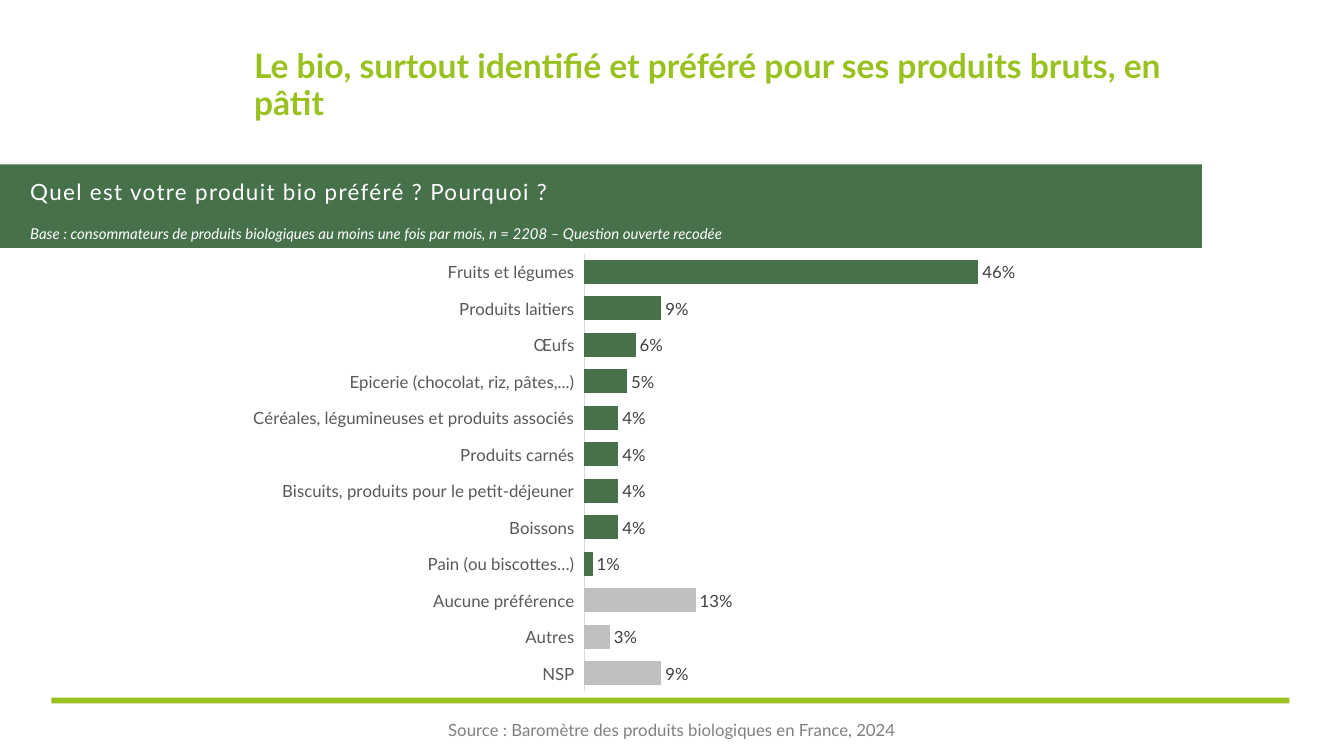
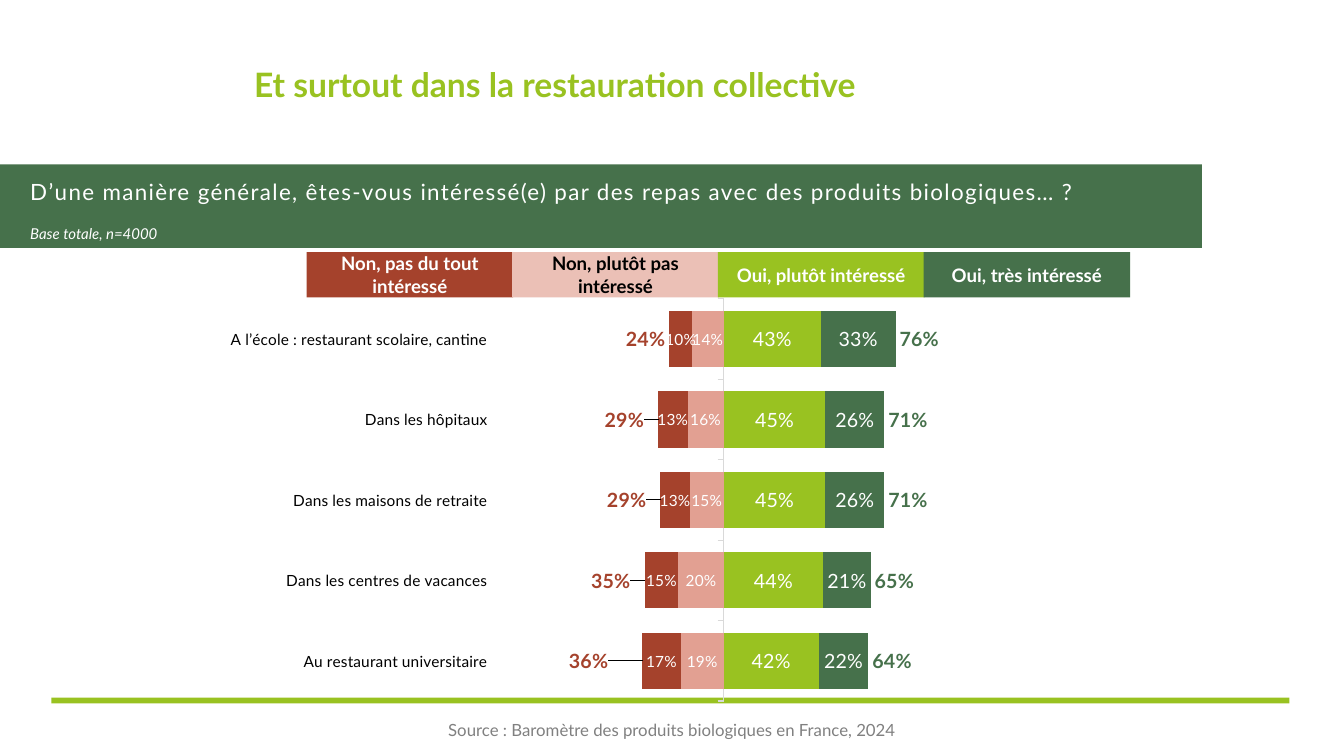
from lxml import etree
from pptx import Presentation
from pptx.chart.data import CategoryChartData
from pptx.dml.color import RGBColor
from pptx.enum.chart import XL_CHART_TYPE, XL_LABEL_POSITION, XL_TICK_LABEL_POSITION, XL_TICK_MARK
from pptx.enum.shapes import MSO_SHAPE
from pptx.enum.text import MSO_ANCHOR, PP_ALIGN
from pptx.oxml import parse_xml
from pptx.oxml.ns import nsdecls, qn
from pptx.util import Inches, Pt

RECT = MSO_SHAPE.RECTANGLE
MIDDLE = MSO_ANCHOR.MIDDLE
LEFT, CENTER = PP_ALIGN.LEFT, PP_ALIGN.CENTER
BARS, STACK = XL_CHART_TYPE.BAR_CLUSTERED, XL_CHART_TYPE.BAR_STACKED
END, BASE, MID = XL_LABEL_POSITION.OUTSIDE_END, XL_LABEL_POSITION.INSIDE_BASE, XL_LABEL_POSITION.CENTER
LOW = XL_TICK_LABEL_POSITION.LOW
NONE, OUT = XL_TICK_MARK.NONE, XL_TICK_MARK.OUTSIDE

GREEN = RGBColor(0x46, 0x71, 0x4B)
LIME = RGBColor(0x99, 0xC2, 0x21)
RUST = RGBColor(0xA5, 0x42, 0x2C)
ROSE = RGBColor(0xE2, 0xA0, 0x92)
PINK = RGBColor(0xEB, 0xC0, 0xB6)
WHITE = RGBColor(0xFF, 0xFF, 0xFF)
BLACK = RGBColor(0, 0, 0)
GRAY = RGBColor(0x80, 0x80, 0x80)
SILVER = RGBColor(0xBF, 0xBF, 0xBF)
PALE = RGBColor(0xD9, 0xD9, 0xD9)
DARK = RGBColor(0x40, 0x40, 0x40)
SLATE = RGBColor(0x59, 0x59, 0x59)
FONT = "Lato"


def add_box(slide, box, text="", size=12, color=WHITE, fill=None, bold=False,
            italic=False, align=LEFT, inset=0, track=0, lead=None):
    box = [Inches(n) for n in box]
    if fill is None:
        shape = slide.shapes.add_textbox(*box)
    else:
        shape = slide.shapes.add_shape(RECT, *box)
        shape.shadow.inherit = False
        shape.fill.solid()
        shape.fill.fore_color.rgb = fill
        shape.line.fill.background()
    if not text:
        return
    frame = shape.text_frame
    frame.word_wrap = True
    frame.vertical_anchor = MIDDLE
    frame.margin_left = frame.margin_right = Inches(inset)
    frame.margin_top = frame.margin_bottom = Inches(inset / 2)
    para = frame.paragraphs[0]
    run = para.add_run()
    run.text = text
    if track:
        run._r.get_or_add_rPr().set("spc", str(track))
    para.alignment = align
    if lead:
        para.line_spacing = lead
    font = para.font
    font.name, font.size, font.bold, font.italic = FONT, Pt(size), bold, italic
    font.color.rgb = color


def add_plot(slide, kind, box, cats, rows, gap, area, span, size, color, tick):
    data = CategoryChartData()
    data.categories = cats
    for name, vals, *rest in rows:
        data.add_series(name, [n / 100 for n in vals])
    chart = slide.shapes.add_chart(kind, *[Inches(n) for n in box], data).chart
    chart.has_legend = chart.has_title = False
    chart.font.name, chart.font.size = FONT, Pt(size)
    chart.font.color.rgb = color
    value = chart.value_axis
    value.minimum_scale, value.maximum_scale = span
    value.has_major_gridlines = value.visible = False
    axis = chart.category_axis
    axis.tick_label_position = LOW
    axis.major_tick_mark, axis.minor_tick_mark = tick, NONE
    axis.format.line.color.rgb = PALE
    axis.format.line.width = Pt(0.75)
    plot = chart.plots[0]
    plot.gap_width = gap
    plot.vary_by_categories = False
    if kind == STACK:
        plot.overlap = 100
    for series, (name, vals, fill, size, color, bold, place) in zip(plot.series, rows):
        series.invert_if_negative = False
        if fill is None:
            series.format.fill.background()
        else:
            series.format.fill.solid()
            series.format.fill.fore_color.rgb = fill
        labels = series.data_labels
        labels.show_value = True
        labels.number_format, labels.number_format_is_linked = "0%;0%", False
        labels.position = place
        labels.font.name, labels.font.size, labels.font.bold = FONT, Pt(size), bold
        labels.font.color.rgb = color
    inner = chart._chartSpace.chart.plotArea
    for old in inner.findall(qn("c:layout")):
        inner.remove(old)
    layout = parse_xml(f"<c:layout {nsdecls('c')}><c:manualLayout/></c:layout>")
    parts = [("layoutTarget", "inner"), ("xMode", "edge"), ("yMode", "edge")]
    for tag, val in parts + list(zip("xywh", area)):
        etree.SubElement(layout[0], qn("c:" + tag)).set("val", str(val))
    inner.insert(0, layout)
    return chart


deck = Presentation()
deck.slide_width, deck.slide_height = Inches(13.33), Inches(7.5)

heads = [
    ("Le bio, surtout identifié et préféré pour ses produits bruts, en pâtit",
     "Quel est votre produit bio préféré ? Pourquoi ?",
     "Base : consommateurs de produits biologiques au moins une fois par mois, n = 2208 – Question ouverte recodée"),
    ("Et surtout dans la restauration collective",
     "D’une manière générale, êtes-vous intéressé(e) par des repas avec des produits biologiques… ?",
     "Base totale, n=4000"),
]
pages = []
for title, ask, base in heads:
    page = deck.slides.add_slide(deck.slide_layouts[6])
    add_box(page, (0, 1.63, 11.92, 0.83), fill=GREEN)
    add_box(page, (0.51, 6.92, 12.28, 0.06), fill=LIME)
    add_box(page, (3.85, 6.97, 5.63, 0.54), "Source : Baromètre des produits biologiques en France, 2024",
            color=GRAY, align=CENTER, inset=0.13)
    add_box(page, (0.3, 1.63, 11.62, 0.58), ask, 16, track=100, lead=0.9)
    add_box(page, (0.3, 2.23, 11.62, 0.2), base, 10.7, italic=True, lead=0.9)
    add_box(page, (2.52, 0.38, 9.4, 0.95), title, 24, LIME, bold=True, lead=0.9)
    pages.append(page)
first, second = pages

foods = [
    ("NSP", 9), ("Autres", 3), ("Aucune préférence", 13),
    ("Pain (ou biscottes…)", 1), ("Boissons", 4),
    ("Biscuits, produits pour le petit-déjeuner", 4), ("Produits carnés", 4),
    ("Céréales, légumineuses et produits associés", 4),
    ("Epicerie (chocolat, riz, pâtes,...)", 5), ("Œufs", 6),
    ("Produits laitiers", 9), ("Fruits et légumes", 46),
]
cats, vals = zip(*foods)
rows = [("Produit préféré", vals, GREEN, 12, DARK, False, END)]
chart = add_plot(first, BARS, (-0.58, 2.51, 12.5, 4.44), cats, rows, 50,
                 (0.51, 0, 0.34, 0.98), (0, 0.5), 12, SLATE, NONE)
for i in range(3):
    fill = chart.plots[0].series[0].points[i].format.fill
    fill.solid()
    fill.fore_color.rgb = SILVER

places = ["Au restaurant universitaire", "Dans les centres de vacances", "Dans les maisons de retraite",
          "Dans les hôpitaux", "A l’école : restaurant scolaire, cantine"]
rows = [
    ("Oui, plutôt intéressé", (42, 44, 45, 45, 43), LIME, 14, WHITE, False, MID),
    ("Oui, très intéressé", (22, 21, 26, 26, 33), GREEN, 14, WHITE, False, MID),
    ("Non, plutôt pas intéressé", (-19, -20, -15, -16, -14), ROSE, 11, WHITE, False, MID),
    ("Non, pas du tout intéressé", (-17, -15, -13, -13, -10), RUST, 11, WHITE, False, MID),
    ("Total oui", (64, 65, 71, 71, 76), None, 14, GREEN, True, BASE),
    ("Total non", (-36, -35, -29, -29, -24), None, 14, RUST, True, BASE),
]
chart = add_plot(second, STACK, (0, 2.96, 9.87, 4), places, rows, 43,
                 (0.5, 0, 0.5, 1), (-1, 1.2), 11, BLACK, OUT)
total = chart.plots[0].series[5]
for i, shift in enumerate((-0.03, -0.01, -0.01, -0.01)):
    label = total.points[i].data_label
    label.font.name, label.font.size, label.font.bold = FONT, Pt(14), True
    label.font.color.rgb = RUST
    label.position = BASE
    item = total.data_labels._element.findall(qn("c:dLbl"))[i]
    item.insert(1, parse_xml(f'<c:layout {nsdecls("c")}><c:manualLayout><c:x val="{shift}"/>'
                             '<c:y val="0"/></c:manualLayout></c:layout>'))
    item.insert(2, parse_xml(f'<c:numFmt {nsdecls("c")} formatCode="0%;0%" sourceLinked="0"/>'))

keys = [
    ("Non, pas du tout intéressé", RUST, WHITE),
    ("Non, plutôt pas intéressé", PINK, BLACK),
    ("Oui, plutôt intéressé", LIME, WHITE),
    ("Oui, très intéressé", GREEN, WHITE),
]
for i, (text, fill, color) in enumerate(keys):
    add_box(second, (3.04 + 2.04 * i, 2.5, 2.05, 0.45), text, 13.3, color, fill,
            bold=True, align=CENTER, inset=0.1)

deck.save("out.pptx")
